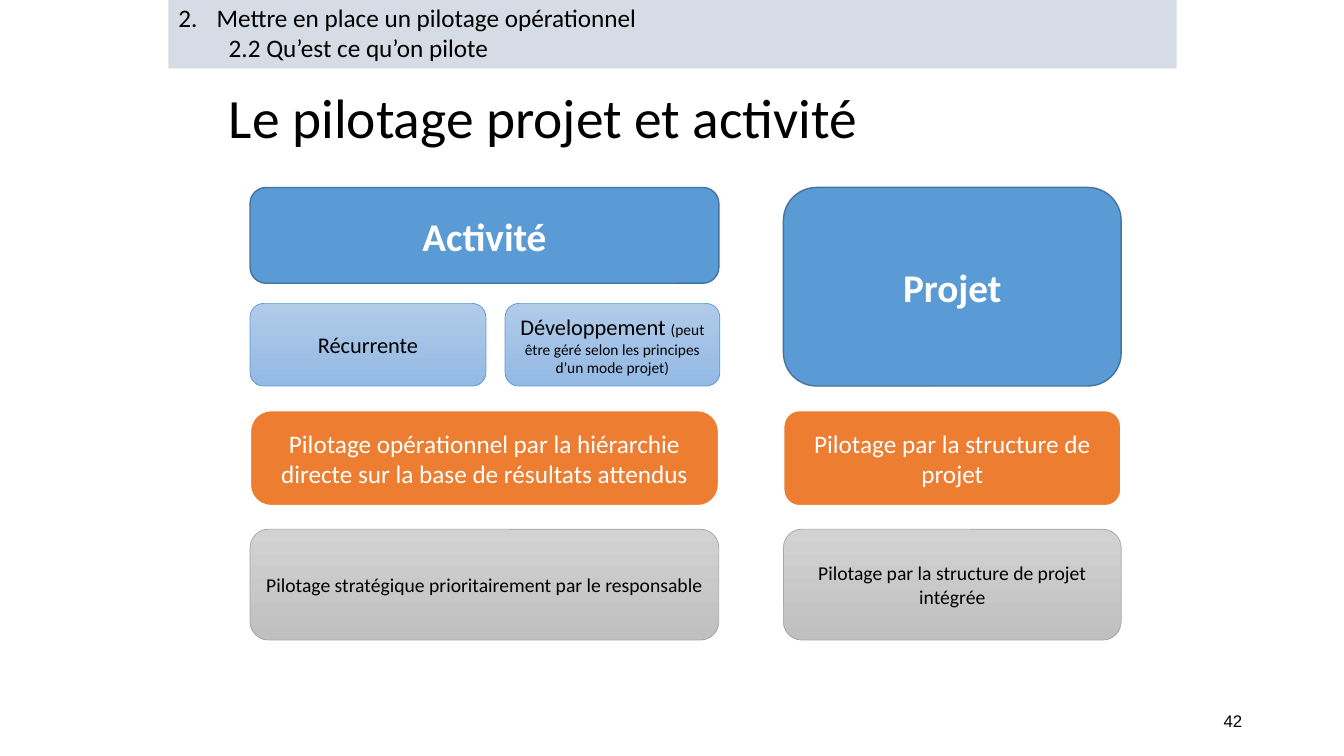
from dataclasses import dataclass

from lxml.etree import SubElement
from pptx import Presentation
from pptx.dml.color import RGBColor
from pptx.enum.shapes import MSO_SHAPE
from pptx.enum.text import MSO_ANCHOR, MSO_AUTO_SIZE, PP_ALIGN
from pptx.oxml.ns import qn
from pptx.util import Inches, Pt


@dataclass(frozen=True)
class Look:
    """Fill (two colours make a vertical gradient), outline and text of a box."""
    fill: tuple
    line: str
    line_width: float
    text: str
    size: float
    bold: bool = False


@dataclass(frozen=True)
class Theme:
    font: str = "Calibri"
    number_font: str = "Arial"
    black: str = "000000"
    band: str = "D6DCE5"
    title_size: float = 39.6
    band_size: float = 18
    note_size: float = 11
    number_size: float = 12
    heading: Look = Look(("5B9BD5",), "43739E", 1, "FFFFFF", 28, True)
    kind: Look = Look(("B1CBE9", "93B9E4"), "5B9BD5", 0.5, "000000", 16)
    operational: Look = Look(("ED7D31",), "FFFFFF", 1.5, "FFFFFF", 18)
    strategic: Look = Look(("D2D2D2", "C0C0C0"), "A5A5A5", 0.5, "000000", 14)


class SlideBuilder:
    def __init__(self, page, theme):
        self.page = page
        self.theme = theme

    def set_font(self, para, size, color, name=None, bold=False):
        para.font.name = name or self.theme.font
        para.font.size = Pt(size)
        para.font.bold = bold
        para.font.color.rgb = RGBColor.from_string(color)

    def title(self, text, left, top, width, height):
        title = self.page.shapes.title
        title.left, title.top = Inches(left), Inches(top)
        title.width, title.height = Inches(width), Inches(height)
        frame = title.text_frame
        frame.text = text
        frame.auto_size = MSO_AUTO_SIZE.NONE
        frame.vertical_anchor = MSO_ANCHOR.MIDDLE
        para = frame.paragraphs[0]
        para.alignment = PP_ALIGN.LEFT
        para.line_spacing = 0.9
        self.set_font(para, self.theme.title_size, self.theme.black)

    def page_number(self, text, left, top, width, height):
        box = self.page.shapes.add_textbox(
            Inches(left), Inches(top), Inches(width), Inches(height))
        frame = box.text_frame
        frame.word_wrap = True
        frame.vertical_anchor = MSO_ANCHOR.MIDDLE
        frame.text = text
        para = frame.paragraphs[0]
        para.alignment = PP_ALIGN.RIGHT
        self.set_font(para, self.theme.number_size, self.theme.black,
                      self.theme.number_font)

    def shape(self, preset, left, top, width, height):
        shape = self.page.shapes.add_shape(
            preset, Inches(left), Inches(top), Inches(width), Inches(height))
        shape.shadow.inherit = False
        shape.text_frame.word_wrap = True
        return shape

    def box(self, text, look, left, top, width, height, note="", corner=None):
        box = self.shape(MSO_SHAPE.ROUNDED_RECTANGLE, left, top, width, height)
        if corner:
            box.adjustments[0] = corner
        if len(look.fill) == 1:
            box.fill.solid()
            box.fill.fore_color.rgb = RGBColor.from_string(look.fill[0])
        else:
            box.fill.gradient()
            box.fill.gradient_angle = 270
            for stop, color in zip(box.fill.gradient_stops, look.fill):
                stop.color.rgb = RGBColor.from_string(color)
        box.line.color.rgb = RGBColor.from_string(look.line)
        box.line.width = Pt(look.line_width)
        box.text_frame.vertical_anchor = MSO_ANCHOR.MIDDLE
        para = box.text_frame.paragraphs[0]
        para.alignment = PP_ALIGN.CENTER
        self.set_font(para, look.size, look.text, bold=look.bold)
        para.add_run().text = text
        if note:
            span = para.add_run()
            span.text = note
            span.font.size = Pt(self.theme.note_size)

    def section_band(self, number, section, subsection, left, top, width, height):
        band = self.shape(MSO_SHAPE.RECTANGLE, left, top, width, height)
        band.fill.solid()
        band.fill.fore_color.rgb = RGBColor.from_string(self.theme.band)
        band.line.fill.background()
        frame = band.text_frame
        frame.auto_size = MSO_AUTO_SIZE.SHAPE_TO_FIT_TEXT
        frame.vertical_anchor = MSO_ANCHOR.TOP
        frame.text = f"{section}\n{subsection}"
        for para in frame.paragraphs:
            para.alignment = PP_ALIGN.LEFT
            self.set_font(para, self.theme.band_size, self.theme.black)
        first, second = frame.paragraphs
        second.level = 1
        for para, margin, indent in ((first, 0.38, -0.38), (second, 0.5, 0)):
            properties = para._p.get_or_add_pPr()
            properties.set("marL", str(Inches(margin)))
            properties.set("indent", str(Inches(indent)))
        bullet = SubElement(first._p.get_or_add_pPr(), qn("a:buAutoNum"))
        bullet.set("type", "arabicPeriod")
        bullet.set("startAt", str(number))


def main():
    deck = Presentation()
    deck.slide_width, deck.slide_height = Inches(13.33), Inches(7.5)
    theme = Theme()
    slide = SlideBuilder(deck.slides.add_slide(deck.slide_layouts[5]), theme)

    slide.title("Le pilotage projet et activité", 2.17, 0.84, 9, 0.71)
    slide.page_number("42", 9.42, 6.95, 3, 0.4)

    activity = (2.48, 4.65)
    project = (7.77, 3.35)
    heading_top, kind_top, operational_top, strategic_top = 1.86, 3.01, 4.07, 5.25
    row_height, kind_height, strategic_height = 0.95, 0.82, 1.1
    project_height = kind_top + kind_height - heading_top

    for text, (left, width), height in (("Activité", activity, row_height),
                                        ("Projet", project, project_height)):
        slide.box(text, theme.heading, left, heading_top, width, height)

    slide.box("Récurrente", theme.kind, activity[0], kind_top, 2.34, kind_height)
    slide.box("Développement ", theme.kind, 5.01, kind_top, 2.13, kind_height,
              note="(peut être géré selon les principes d’un mode projet)")

    for (left, width), operational, strategic, corner in (
        (activity,
         "Pilotage opérationnel par la hiérarchie directe sur la base de résultats attendus",
         "Pilotage stratégique prioritairement par le responsable", 0.22),
        (project, "Pilotage par la structure de projet",
         "Pilotage par la structure de projet intégrée", None),
    ):
        slide.box(operational, theme.operational, left, operational_top,
                  width, row_height, corner=corner)
        slide.box(strategic, theme.strategic, left, strategic_top,
                  width, strategic_height)

    slide.section_band(2, "Mettre en place un pilotage opérationnel",
                       "2.2 Qu’est ce qu’on pilote", 1.67, -0.03, 10, 0.71)
    deck.save("out.pptx")


if __name__ == "__main__":
    main()
